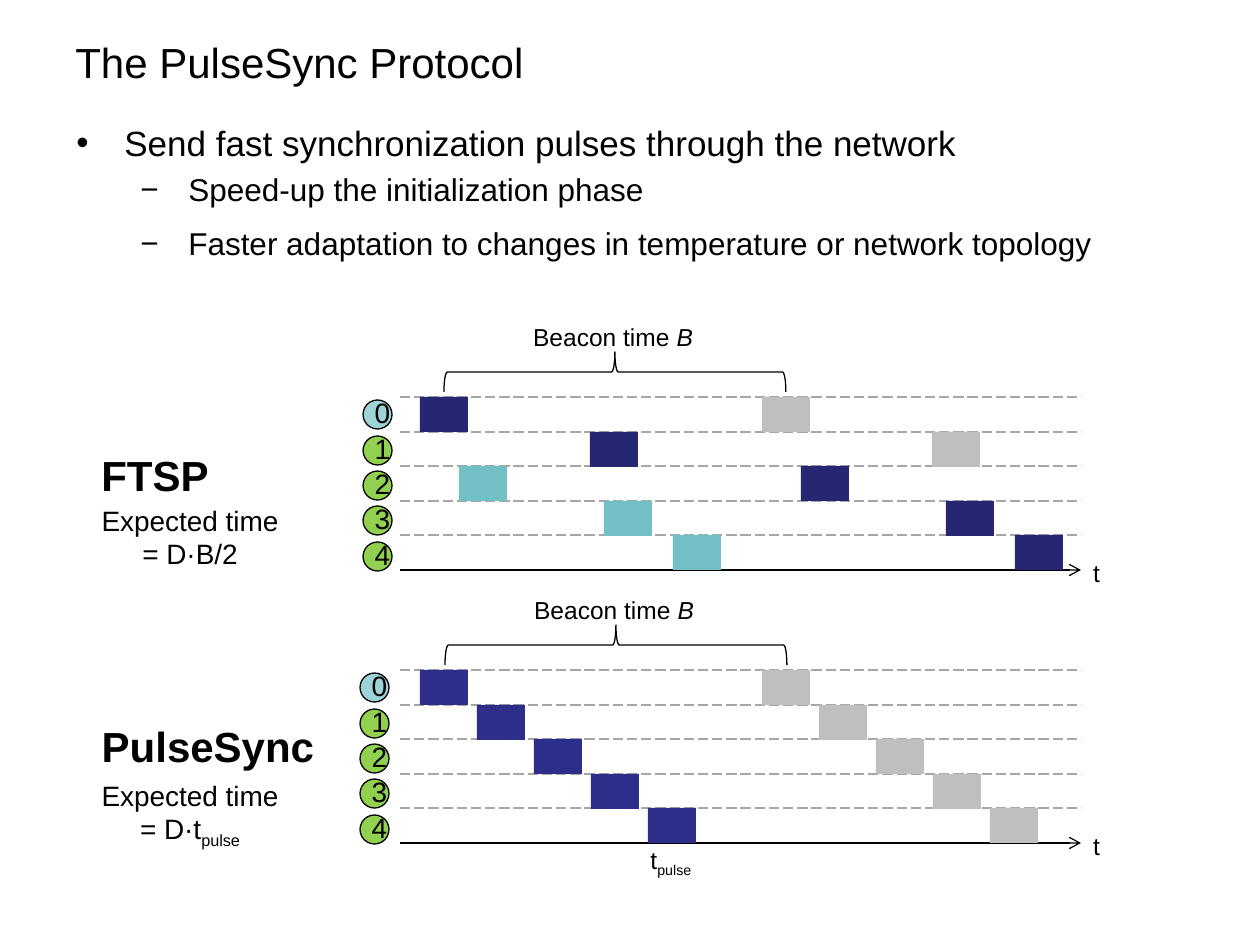
from dataclasses import dataclass

from lxml import etree
from pptx import Presentation
from pptx import util as u
from pptx.dml import color
from pptx.enum import dml, shapes, text
from pptx.oxml import ns

PX = 914400 / 126
LANES = 5
CHART_HEIGHT = 173
BLOCK_WIDTH, BLOCK_HEIGHT = 48, 35
PERIOD = 342


@dataclass(frozen=True)
class Theme:
    font: str = "Arial"
    ink: str = "000000"
    lane: str = "A6A6A6"
    root: str = "9ED3D7"
    node: str = "92D050"
    navy: str = "262673"
    indigo: str = "2D2D8A"
    teal: str = "72BFC5"
    later: str = "BFBFBF"
    heading: int = 24
    body: int = 20
    sub: int = 18
    note: int = 16
    label: int = 14
    stroke: float = 0.75


def px(length):
    return u.Emu(round(length * PX))


def lane_y(top, lane):
    return top + round(CHART_HEIGHT * lane / LANES)


class Page:
    def __init__(self, deck, theme):
        self.theme = theme
        self.page = deck.slides.add_slide(deck.slide_layouts[6])

    def rgb(self, value):
        return color.RGBColor.from_string(value)

    def span(self, para, words, size, bold=False, italic=False, sub=False):
        span = para.add_run()
        span.text = words
        font = span.font
        font.name, font.size = self.theme.font, u.Pt(size)
        font.bold, font.italic = bold, italic
        font.color.rgb = self.rgb(self.theme.ink)
        if sub:
            span._r.get_or_add_rPr().set("baseline", "-25000")

    def box(self, left, top, width, height, wrap=False):
        box = self.page.shapes.add_textbox(px(left), px(top), px(width), px(height))
        box.text_frame.word_wrap = wrap
        return box.text_frame

    def label(self, area, size, *lines, bold=False):
        frame = self.box(*area)
        for number, line in enumerate(lines):
            para = frame.add_paragraph() if number else frame.paragraphs[0]
            para.alignment = text.PP_ALIGN.CENTER
            for words, style in line:
                self.span(para, words, size, bold=bold, **style)

    def title(self, area, words):
        frame = self.box(*area, wrap=True)
        frame.vertical_anchor = text.MSO_ANCHOR.MIDDLE
        self.span(frame.paragraphs[0], words, self.theme.heading)

    def bullets(self, area, items):
        frame = self.box(*area, wrap=True)
        for number, (level, words, after) in enumerate(items):
            para = frame.add_paragraph() if number else frame.paragraphs[0]
            margin, mark, size = ((48, "•", self.theme.body), (112, "−", self.theme.sub))[level]
            props = para._p.get_or_add_pPr()
            props.set("marL", str(px(margin)))
            props.set("indent", str(px(-48)))
            etree.SubElement(props, ns.qn("a:buFont")).set("typeface", self.theme.font)
            etree.SubElement(props, ns.qn("a:buChar")).set("char", mark)
            para.level = level
            para.space_before = u.Pt(4 if number else 0)
            para.space_after = u.Pt(after)
            self.span(para, words, size)

    def line(self, start, end, tint, dashed=False, arrow=False):
        line = self.page.shapes.add_connector(
            shapes.MSO_CONNECTOR.STRAIGHT, *map(px, start + end))
        line.line.color.rgb = self.rgb(tint)
        line.line.width = u.Pt(self.theme.stroke)
        props = line._element.spPr
        if dashed:
            line.line.dash_style = dml.MSO_LINE.LONG_DASH
        if arrow:
            etree.SubElement(props.get_or_add_ln(), ns.qn("a:tailEnd")).set("type", "arrow")
        etree.SubElement(props, ns.qn("a:effectLst"))

    def shape(self, kind, area, fill=None, outlined=False):
        shape = self.page.shapes.add_shape(kind, *map(px, area))
        shape.shadow.inherit = False
        if fill:
            shape.fill.solid()
            shape.fill.fore_color.rgb = self.rgb(fill)
        else:
            shape.fill.background()
        if outlined:
            shape.line.color.rgb = self.rgb(self.theme.ink)
            shape.line.width = u.Pt(self.theme.stroke)
        else:
            shape.line.fill.background()
        return shape

    def node(self, left, top, number):
        fill = self.theme.node if number else self.theme.root
        shape = self.shape(shapes.MSO_SHAPE.OVAL, (left, top, 29, 29), fill, outlined=True)
        frame = shape.text_frame
        frame.word_wrap = False
        frame.vertical_anchor = text.MSO_ANCHOR.MIDDLE
        frame.margin_left = px(10)
        frame.margin_right = frame.margin_top = frame.margin_bottom = 0
        para = frame.paragraphs[0]
        para.alignment = text.PP_ALIGN.CENTER
        para.line_spacing = 0.93
        self.span(para, str(number), self.theme.note)

    def brace(self, center, top):
        shape = self.shape(shapes.MSO_SHAPE.RIGHT_BRACE,
                           (center - 20, top + 20 - PERIOD / 2, 40, PERIOD), outlined=True)
        shape.rotation = 270

    def timeline(self, top, node_left, center, blocks):
        left, right = 400, 1081
        for lane in range(LANES):
            y = lane_y(top, lane)
            self.line((left, y), (right, y), self.theme.lane, dashed=True)
        axis = top + CHART_HEIGHT
        self.line((left, axis), (right, axis), self.theme.ink, arrow=True)
        for lane, (x, first, second) in enumerate(blocks):
            for start, fill in ((x, first), (x + PERIOD, second)):
                self.shape(shapes.MSO_SHAPE.RECTANGLE,
                           (start, lane_y(top, lane), BLOCK_WIDTH, BLOCK_HEIGHT), fill)
            self.node(node_left, top + 3 + round(35.5 * lane), lane)
        self.brace(center, top - 45)
        self.label((center - 105, top - 81, 206, 43), self.theme.label,
                   [("Beacon time ", {}), ("B", {"italic": True})])
        self.label((right - 1, top + 155, 33, 43), self.theme.label, [("t", {})])

    def protocol(self, name, area, note_top, formula):
        self.label(area, self.theme.heading, [(name, {})], bold=True)
        self.label((79, note_top, 222, 79), self.theme.note, [("Expected time", {})], formula)


def main():
    theme = Theme()
    deck = Presentation()
    deck.slide_width, deck.slide_height = px(1260), px(945)
    page = Page(deck, theme)
    page.title((63, 28, 1134, 68), "The PulseSync Protocol")
    page.bullets((64, 115, 1131, 160), [
        (0, "Send fast synchronization pulses through the network", 0),
        (1, "Speed-up the initialization phase", 5.4),
        (1, "Faster adaptation to changes in temperature or network topology", 0),
    ])

    page.timeline(397, 363, 615, [
        (420, theme.navy, theme.later),
        (590, theme.navy, theme.later),
        (459, theme.teal, theme.navy),
        (604, theme.teal, theme.navy),
        (673, theme.teal, theme.navy),
    ])
    page.protocol("FTSP", (65, 443, 180, 63), 497, [("= D·B/2", {})])

    pulse = ("pulse", {"sub": True})
    page.timeline(670, 360, 616, [
        (420 + 57 * lane, theme.indigo, theme.later) for lane in range(LANES)])
    page.protocol("PulseSync", (68, 714, 280, 63), 772, [("= D·t", {}), pulse])
    page.label((626, 839, 90, 42), theme.label, [("t", {}), pulse])
    deck.save("out.pptx")


if __name__ == "__main__":
    main()
